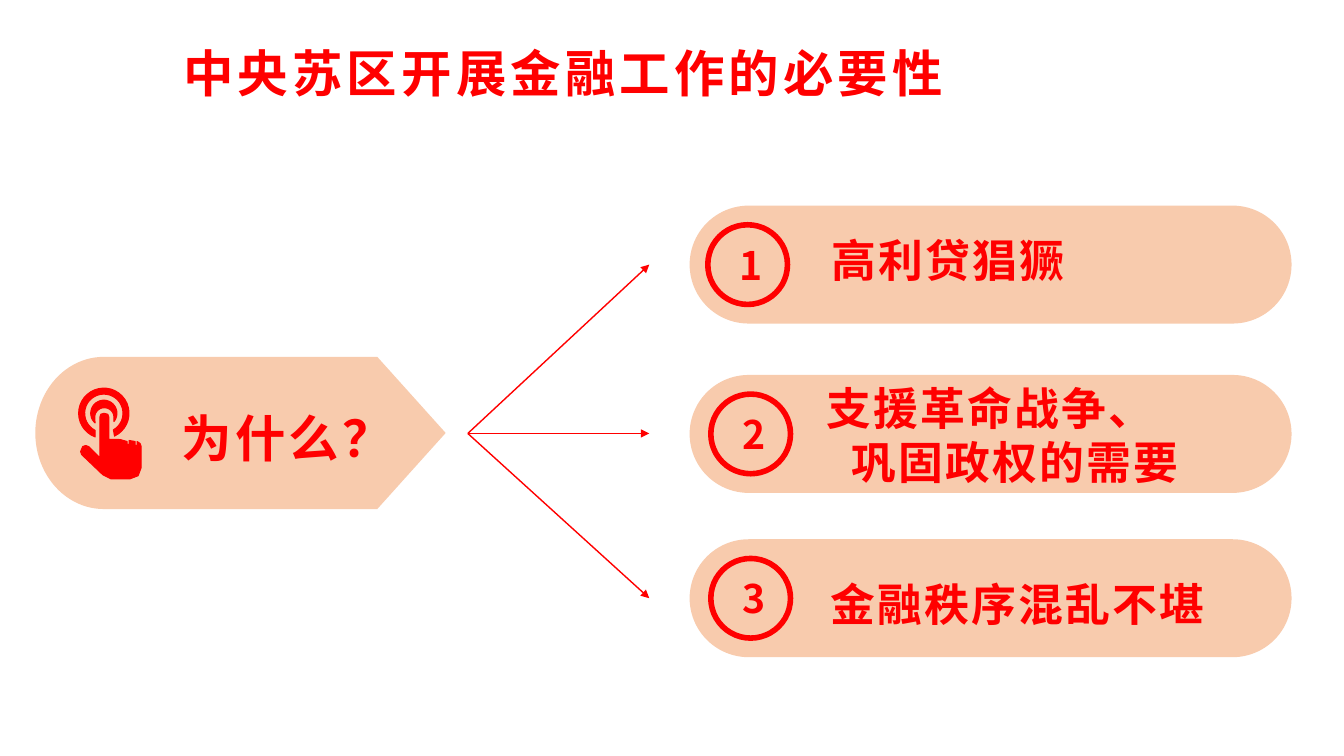
from math import cos, radians, sin

from lxml import etree
from pptx import Presentation
from pptx.dml.color import RGBColor
from pptx.enum.shapes import MSO_CONNECTOR, MSO_SHAPE as SHAPE
from pptx.enum.text import MSO_ANCHOR as ANCHOR, PP_ALIGN as ALIGN
from pptx.oxml.ns import qn
from pptx.util import Inches, Pt

# Content
TITLE = "中央苏区开展金融工作的必要性"
QUESTION = "为什么？"
# pill top, circle left, label left, label top, label inset, line spacing, lines with indents
REASONS = [
    (2.04, 7.02, 8.09, 2.26, 0.16, 1.0, [("高利贷猖獗", 0)]),
    (3.72, 7.05, 8.10, 3.73, 0.10, 1.0, [("支援革命战争、", 0), ("巩固政权的需要", 0.25)]),
    (5.35, 7.05, 8.08, 5.41, 0.16, 1.5, [("金融秩序混乱不堪", 0)]),
]
COLORS = {"red": "FF0000", "peach": "F8CBAD"}
FONT = "Noto Sans CJK SC"
PILL_LEFT, PILL_W, PILL_H = 6.84, 5.97, 1.17
CIRCLE = 0.79
ARROW_START, ARROW_END_X = (4.64, 4.3), 6.44

# Tapping hand: outline points, and the centre of the rings
HAND = [(1.4, 4.43), (1.4, 4.64), (1.37, 4.72), (1.29, 4.75), (1.1, 4.75), (1.02, 4.71),
        (0.81, 4.51), (0.8, 4.48), (0.82, 4.43), (0.85, 4.42), (0.88, 4.43), (0.99, 4.54),
        (0.99, 4.14), (1, 4.11), (1.03, 4.1), (1.07, 4.11), (1.08, 4.14), (1.08, 4.36),
        (1.18, 4.36), (1.18, 4.4), (1.19, 4.4), (1.19, 4.36), (1.26, 4.38), (1.26, 4.41),
        (1.28, 4.41), (1.28, 4.37), (1.34, 4.38), (1.34, 4.42), (1.36, 4.42), (1.36, 4.38),
        (1.39, 4.4)]
RING = (1.03, 4.1)

prs = Presentation()
prs.slide_width, prs.slide_height = Inches(13.33), Inches(7.5)
slide = prs.slides.add_slide(prs.slide_layouts[6])
shapes = slide.shapes


def color(name):
    return RGBColor.from_string(COLORS[name])


def paint(sp, fill, line_width=0):
    sp.shadow.inherit = False
    sp.fill.solid()
    sp.fill.fore_color.rgb = color(fill)
    if line_width:
        sp.line.color.rgb = color("red")
        sp.line.width = Pt(line_width)
    else:
        sp.line.fill.background()


def add_shape(kind, x, y, w, h, line_width=0):
    sp = shapes.add_shape(kind, Inches(x), Inches(y), Inches(w), Inches(h))
    paint(sp, "peach", line_width)
    return sp


def write(tf, lines, size, spacing, align=ALIGN.LEFT, line_spacing=1.0):
    for i, (text, indent) in enumerate(lines):
        p = tf.paragraphs[0] if i == 0 else tf.add_paragraph()
        p.text = text
        p.alignment = align
        p.line_spacing = line_spacing
        if indent:
            p._p.get_or_add_pPr().set("marL", str(Inches(indent)))
        f = p.font
        f.size, f.bold, f.name = Pt(size), True, FONT
        f.color.rgb = color("red")
        f._element.set("spc", str(int(spacing * 100)))
        etree.SubElement(f._element, qn("a:ea")).set("typeface", FONT)


def add_text(x, y, w, h, lines, size, spacing, inset=0.1, wrap=True, **style):
    tf = shapes.add_textbox(Inches(x), Inches(y), Inches(w), Inches(h)).text_frame
    tf.word_wrap = wrap
    tf.margin_left = Inches(inset)
    write(tf, lines, size, spacing, **style)


def add_arrow(start, end):
    c = shapes.add_connector(MSO_CONNECTOR.STRAIGHT, *map(Inches, start + end))
    c.line.color.rgb = color("red")
    c.line.width = Pt(1)
    etree.SubElement(c.line._get_or_add_ln(), qn("a:tailEnd")).set("type", "triangle")
    etree.SubElement(c._element.spPr, qn("a:effectLst"))


def arc(center, radius, first, last, steps=32):
    angles = [radians(first + (last - first) * i / steps) for i in range(steps + 1)]
    return [(center[0] + radius * cos(a), center[1] + radius * sin(a)) for a in angles]


def add_outline(contours):
    contours = [[(Inches(x), Inches(y)) for x, y in pts] for pts in contours]
    fb = shapes.build_freeform(*contours[0][0])
    for i, pts in enumerate(contours):
        if i:
            fb.move_to(*pts[0])
        fb.add_line_segments(pts[1:], close=True)
    paint(fb.convert_to_shape(), "red", 0.75)


# Title
add_text(1.72, 0.37, 9.45, 0.71, [(TITLE, 0)], 36, 3)

# Question block with the hand icon
add_shape(SHAPE.FLOWCHART_DISPLAY, 0.35, 3.54, 4.07, 1.51).rotation = 180
outer_ring = arc(RING, 0.25, 110, 425) + arc(RING, 0.19, 420, 117)
inner_ring = arc(RING, 0.13, 132, 399) + arc((1.035, 4.14), 0.095, 360, 180)
add_outline([HAND, inner_ring, outer_ring])
add_text(1.67, 3.99, 2.36, 0.71, [(QUESTION, 0)], 36, 2.5, wrap=False, align=ALIGN.CENTER)

# Reasons: arrow, pill, numbered circle and label
for number, (top, circle_x, x, y, inset, line_spacing, lines) in enumerate(REASONS, 1):
    middle = top + PILL_H / 2
    add_arrow(ARROW_START, (ARROW_END_X, 4.3 if number == 2 else middle))
    pill = add_shape(SHAPE.ROUNDED_RECTANGLE, PILL_LEFT, top, PILL_W, PILL_H)
    pill.adjustments[0] = 0.5
    circle = add_shape(SHAPE.OVAL, circle_x, middle - CIRCLE / 2, CIRCLE, CIRCLE, 4)
    tf = circle.text_frame
    tf.margin_left = Inches(0.16)
    tf.vertical_anchor = ANCHOR.MIDDLE
    write(tf, [(str(number), 0)], 28, 2.5, ALIGN.CENTER)
    add_text(x, y, 4.2, 0.64 * len(lines), lines, 32, 1.5, inset, line_spacing=line_spacing)

prs.save("out.pptx")
